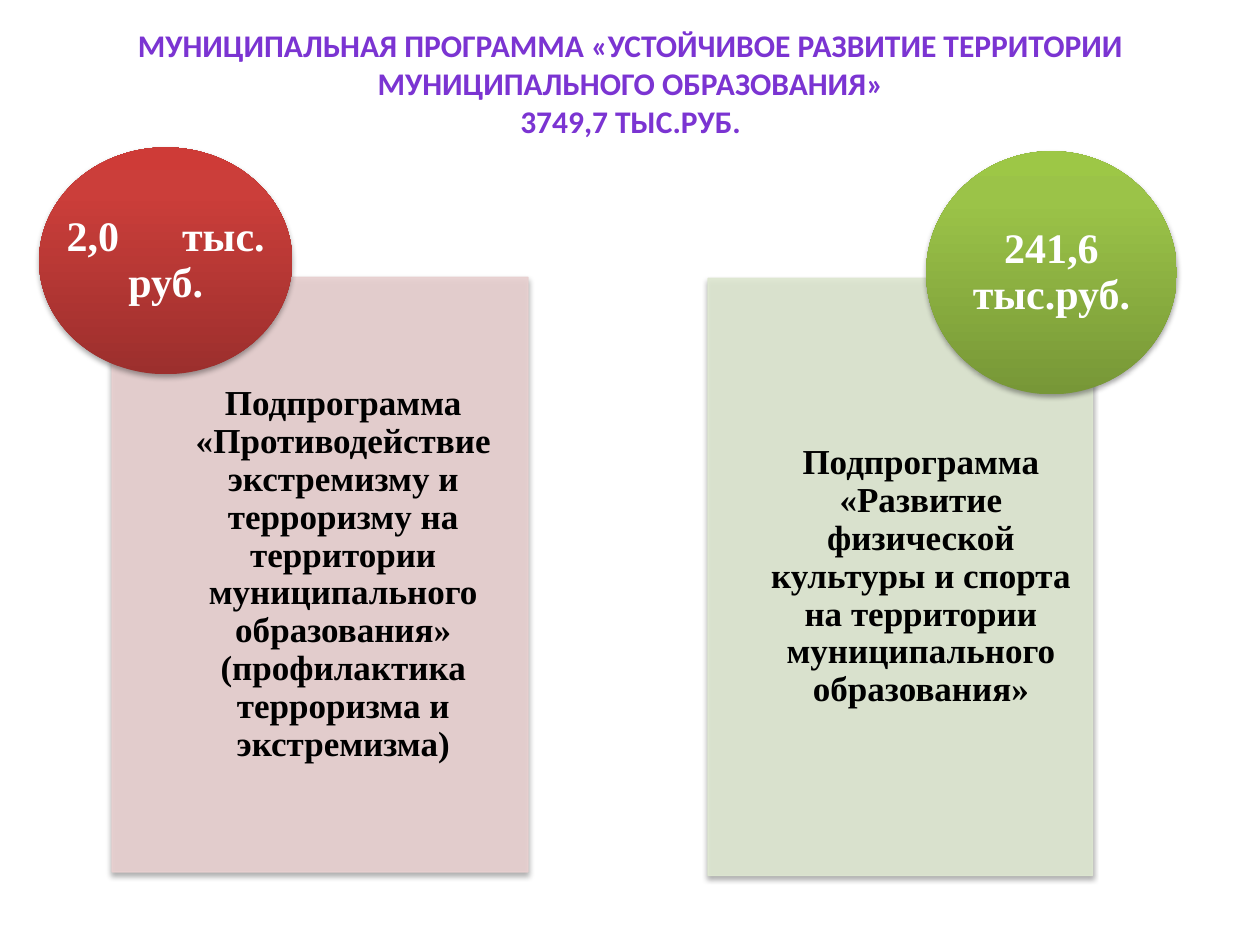
import copy

import lxml.etree
import pptx
import pptx.dml.color
import pptx.enum.shapes
import pptx.enum.text
import pptx.oxml.ns
import pptx.util

SHAPES = pptx.enum.shapes.MSO_SHAPE
WIDTH, HEIGHT = pptx.util.Inches(10), pptx.util.Inches(7.5)
COLUMN, ROW = WIDTH / 100, HEIGHT / 75  # grid of 100 columns by 75 rows
TEXT_INDENT = 0.16  # share of a panel's width left free before its text
SERIF = "Times New Roman"
COLORS = {
    "title": "7B34D2", "text": "000000", "badge text": "FFFFFF", "shadow": "000000",
    "red panel": "E8D0D0", "green panel": "DEE7D1",
}
GRADIENTS = {
    "red": ("9C2F2D", "CB3E3A", "CE3B37"),
    "green": ("779737", "9BC348", "9DC746"),
}
STOPS = (0, 0.8, 1)


def color(name):
    return pptx.dml.color.RGBColor.from_string(COLORS.get(name, name))


def grid(box):
    """Turn columns and rows into slide lengths."""
    return [round(value * unit) for value, unit in zip(box, (COLUMN, ROW) * 2)]


def add_element(parent, tag, **attributes):
    return lxml.etree.SubElement(parent, pptx.oxml.ns.qn(tag), attributes)


def add_shadow(shape):
    shape.shadow.inherit = False
    effects = shape._element.spPr.find(pptx.oxml.ns.qn("a:effectLst"))
    shadow = add_element(effects, "a:outerShdw", blurRad="40000", dist="23000",
                         dir="5400000", rotWithShape="0")
    shade = add_element(shadow, "a:srgbClr", val=COLORS["shadow"])
    add_element(shade, "a:alpha", val="35000")


def format_text(frame, font_name, size, color_name, line_spacing):
    frame.word_wrap = True
    for paragraph in frame.paragraphs:
        paragraph.alignment = pptx.enum.text.PP_ALIGN.CENTER
        paragraph.line_spacing = line_spacing
        for run in paragraph.runs:
            run.font.name = font_name
            run.font.size = pptx.util.Pt(size)
            run.font.bold = True
            run.font.color.rgb = color(color_name)


def add_label(slide, box, words, size, color_name, inset=0, gap=0):
    """Centred text; gap widens the first space by that many points."""
    frame = slide.shapes.add_textbox(*grid(box)).text_frame
    frame.vertical_anchor = pptx.enum.text.MSO_ANCHOR.MIDDLE
    frame.margin_left = 0
    frame.margin_top = frame.margin_right = frame.margin_bottom = pptx.util.Inches(inset)
    paragraph = frame.paragraphs[0]
    for part in words.partition(" "):
        paragraph.add_run().text = part
    if gap:
        paragraph.runs[1].font._element.set("spc", str(gap * 100))
    format_text(frame, SERIF, size, color_name, 0.9)


def add_title(slide, box, lines):
    title = slide.shapes.title
    title.left, title.top, title.width, title.height = grid(box)
    frame = title.text_frame
    frame.text = "\n".join(lines)
    frame.auto_size = pptx.enum.text.MSO_AUTO_SIZE.NONE
    frame.vertical_anchor = pptx.enum.text.MSO_ANCHOR.TOP
    format_text(frame, "Calibri", 18, "title", 1.0)


def add_panel(slide, box, color_name, words):
    left, top, width, height = box
    panel = slide.shapes.add_shape(SHAPES.RECTANGLE, *grid(box))
    panel.fill.solid()
    panel.fill.fore_color.rgb = panel.line.color.rgb = color(color_name)
    panel.line.width = pptx.util.Pt(0.75)
    for shade in panel._element.spPr.iter(pptx.oxml.ns.qn("a:srgbClr")):
        add_element(shade, "a:alpha", val="90000")
    add_shadow(panel)
    indent = width * TEXT_INDENT
    add_label(slide, (left + indent, top, width - indent, height), words, 20, "text", 0.16)


def add_badge(slide, box, hue, words, gap):
    badge = slide.shapes.add_shape(SHAPES.OVAL, *grid(box))
    badge.line.fill.background()
    badge.fill.gradient()
    badge.fill.gradient_angle = 90
    stop_list = badge._element.spPr.find(".//" + pptx.oxml.ns.qn("a:gsLst"))
    stop_list.append(copy.deepcopy(stop_list[0]))
    for stop, position, shade in zip(badge.fill.gradient_stops, STOPS, GRADIENTS[hue]):
        stop.position = position
        stop.color.rgb = color(shade)
    add_shadow(badge)
    add_label(slide, box, words, 24, "badge text", gap=gap)


def add_subprogram(slide, origin, panel, badge, hue, words, amount, gap=0):
    """A panel with a round badge, both placed from the region's corner."""
    def place(box):
        return (origin[0] + box[0], origin[1] + box[1], *box[2:])

    add_panel(slide, place(panel), f"{hue} panel", words)
    add_badge(slide, place(badge), hue, amount, gap)


def main():
    presentation = pptx.Presentation()
    presentation.slide_width, presentation.slide_height = WIDTH, HEIGHT
    slide = presentation.slides.add_slide(presentation.slide_layouts[5])

    # Heading
    add_title(slide, (1.6, 1.6, 96.9, 10.1), (
        "МУНИЦИПАЛЬНАЯ ПРОГРАММА «УСТОЙЧИВОЕ РАЗВИТИЕ ТЕРРИТОРИИ",
        "МУНИЦИПАЛЬНОГО ОБРАЗОВАНИЯ»",
        "3749,7 ТЫС.РУБ."))

    # Left: badge over the panel's left corner
    add_subprogram(
        slide, (3.1, 11.7), (5.8, 10.3, 33, 47.2), (0, 0, 20.1, 18), "red",
        "Подпрограмма «Противодействие экстремизму и терроризму на территории "
        "муниципального образования» (профилактика терроризма и экстремизма)",
        "2,0 тыс. руб.", gap=30)

    # Right: badge over the panel's right corner
    add_subprogram(
        slide, (56.2, 12), (0, 10.1, 30.5, 47.4), (17.3, 0, 19.9, 19.3), "green",
        "Подпрограмма «Развитие физической культуры и спорта на территории "
        "муниципального образования»",
        "241,6 тыс.руб.")

    presentation.save("out.pptx")


if __name__ == "__main__":
    main()
